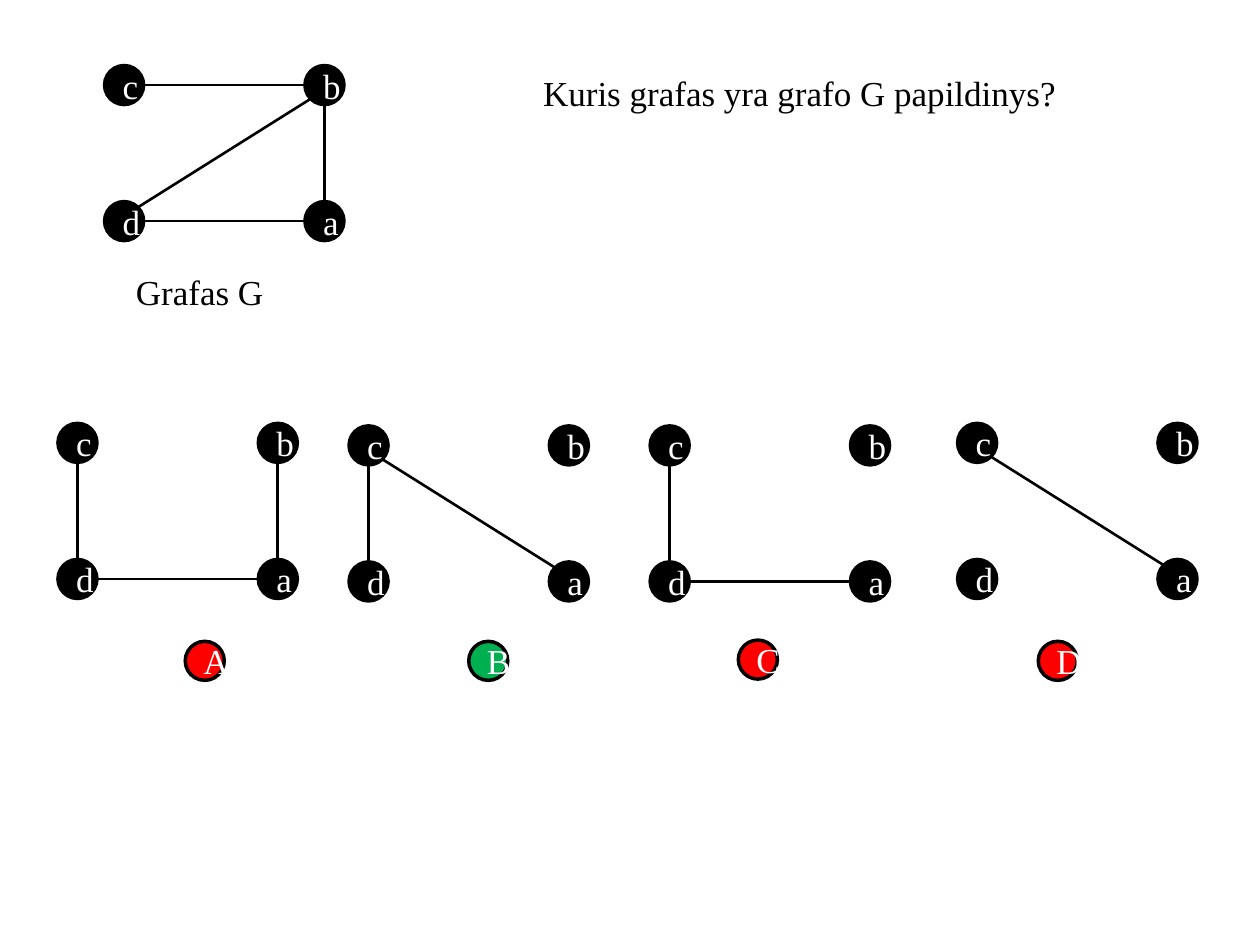
from math import hypot

from lxml.etree import SubElement
from pptx import Presentation
from pptx.dml.color import RGBColor
from pptx.enum.shapes import MSO_CONNECTOR, MSO_SHAPE
from pptx.enum.text import MSO_ANCHOR, MSO_AUTO_SIZE, PP_ALIGN
from pptx.oxml.ns import qn
from pptx.util import Inches, Pt

COLORS = {"black": "000000", "white": "FFFFFF", "wrong": "FF0000", "right": "00B050"}
RGB = {name: RGBColor.from_string(value) for name, value in COLORS.items()}

SIZE = 0.31
WIDE, HIGH = 1.59, 1.08
NODES = {"c": (0, 0), "b": (WIDE, 0), "d": (0, HIGH), "a": (WIDE, HIGH)}


def write(shape, text, color, align):
    frame = shape.text_frame
    frame.text = text
    para = frame.paragraphs[0]
    para.alignment = align
    font = para.runs[0].font
    for key, value in {"name": "Times New Roman", "size": Pt(20), "bold": False}.items():
        setattr(font, key, value)
    font.color.rgb = RGB[color]
    return frame


def add_dot(shapes, text, left, top, fill):
    dot = shapes.add_shape(MSO_SHAPE.OVAL, Inches(left), Inches(top), Inches(SIZE), Inches(SIZE))
    dot.shadow.inherit = False
    dot.fill.solid()
    dot.fill.fore_color.rgb = RGB[fill]
    dot.line.color.rgb = RGB["black"]
    dot.line.width = Pt(2)
    write(dot, text, "white", PP_ALIGN.CENTER).vertical_anchor = MSO_ANCHOR.MIDDLE


prs = Presentation()
prs.slide_width, prs.slide_height = Inches(10), Inches(7.5)
slide = prs.slides.add_slide(prs.slide_layouts[5])

# Question and caption
title = slide.shapes.title
place = {"left": 4.21, "top": 0.52, "width": 4.57, "height": 0.44}
for key, value in place.items():
    setattr(title, key, Inches(value))
label = slide.shapes.add_textbox(Inches(0.98), Inches(2.1), Inches(1.59), Inches(0.44))
for box, text in ((title, "Kuris grafas yra grafo G papildinys?"), (label, "Grafas G")):
    frame = write(box, text, "black", PP_ALIGN.LEFT)
    layout = {"word_wrap": True, "vertical_anchor": MSO_ANCHOR.TOP,
              "auto_size": MSO_AUTO_SIZE.SHAPE_TO_FIT_TEXT}
    for key, value in layout.items():
        setattr(frame, key, value)

# Graph G, then the four candidate graphs: left, top, edges
graphs = [
    (0.83, 0.52, "cb da db ba"),
    (0.46, 3.36, "da dc ba"),
    (2.77, 3.38, "ca cd"),
    (5.16, 3.38, "da dc"),
    (7.6, 3.36, "ca"),
]
for left, top, edges in graphs:
    shapes = slide.shapes.add_group_shape().shapes
    for name, (x, y) in NODES.items():
        add_dot(shapes, name, left + x, top + y, "black")
    for start, end in edges.split():
        (x1, y1), (x2, y2) = NODES[start], NODES[end]
        # Edges leave a node at its side or at 45 degrees
        dx, dy = (x2 > x1) - (x2 < x1), (y2 > y1) - (y2 < y1)
        trim = SIZE / 2 / hypot(dx, dy)
        x0, y0 = left + SIZE / 2, top + SIZE / 2
        ends = (x0 + x1 + dx * trim, y0 + y1 + dy * trim,
                x0 + x2 - dx * trim, y0 + y2 - dy * trim)
        edge = shapes.add_connector(MSO_CONNECTOR.STRAIGHT, *map(Inches, ends))
        edge.line.color.rgb = RGB["black"]
        edge.line.width = Pt(1.5)
        SubElement(edge.element.spPr, qn("a:effectLst"))

# Answer buttons
answers = [
    ("A", 1.47, 5.09, "wrong"),
    ("B", 3.72, 5.09, "right"),
    ("C", 5.86, 5.08, "wrong"),
    ("D", 8.24, 5.09, "wrong"),
]
for answer in answers:
    add_dot(slide.shapes, *answer)

prs.save("out.pptx")
